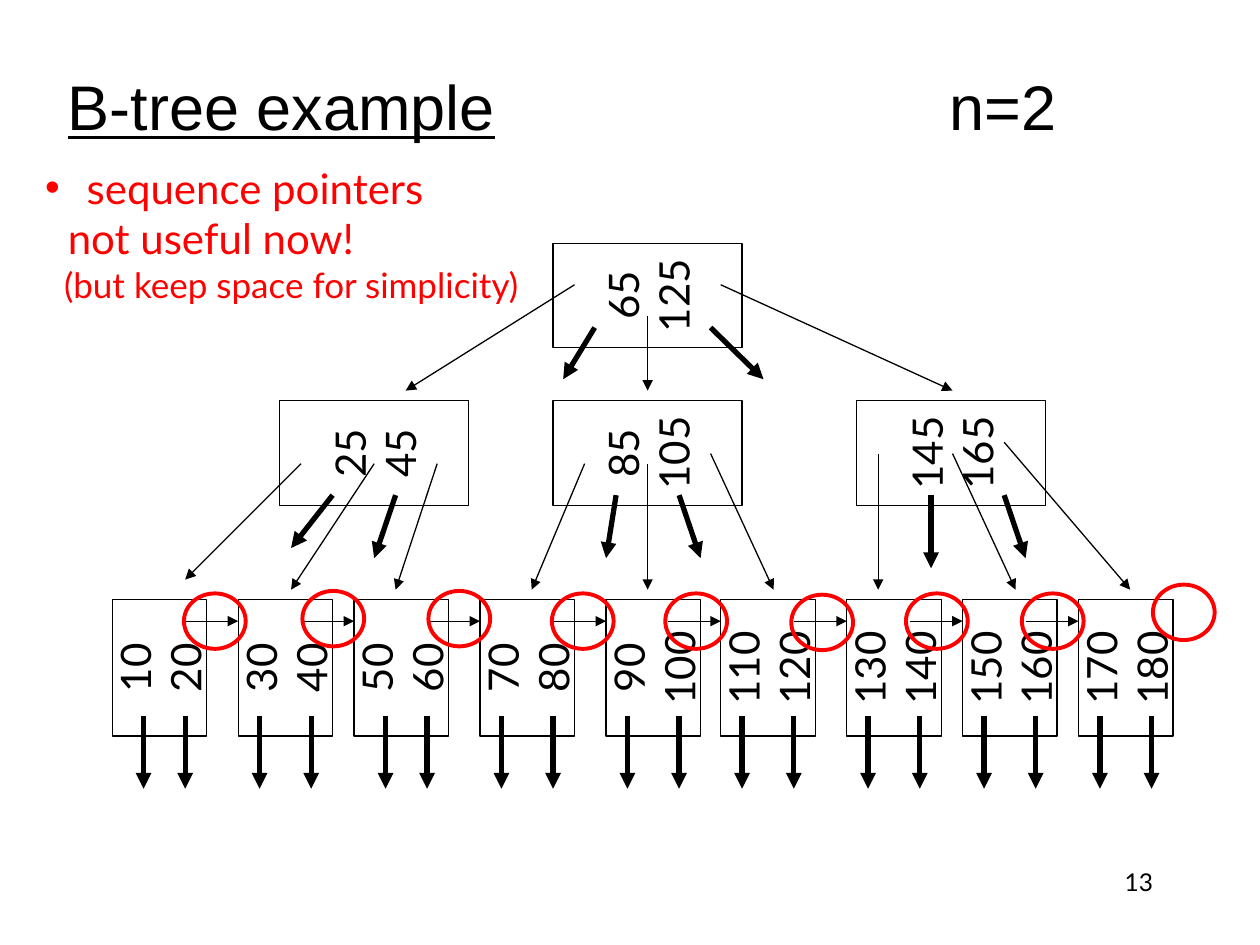
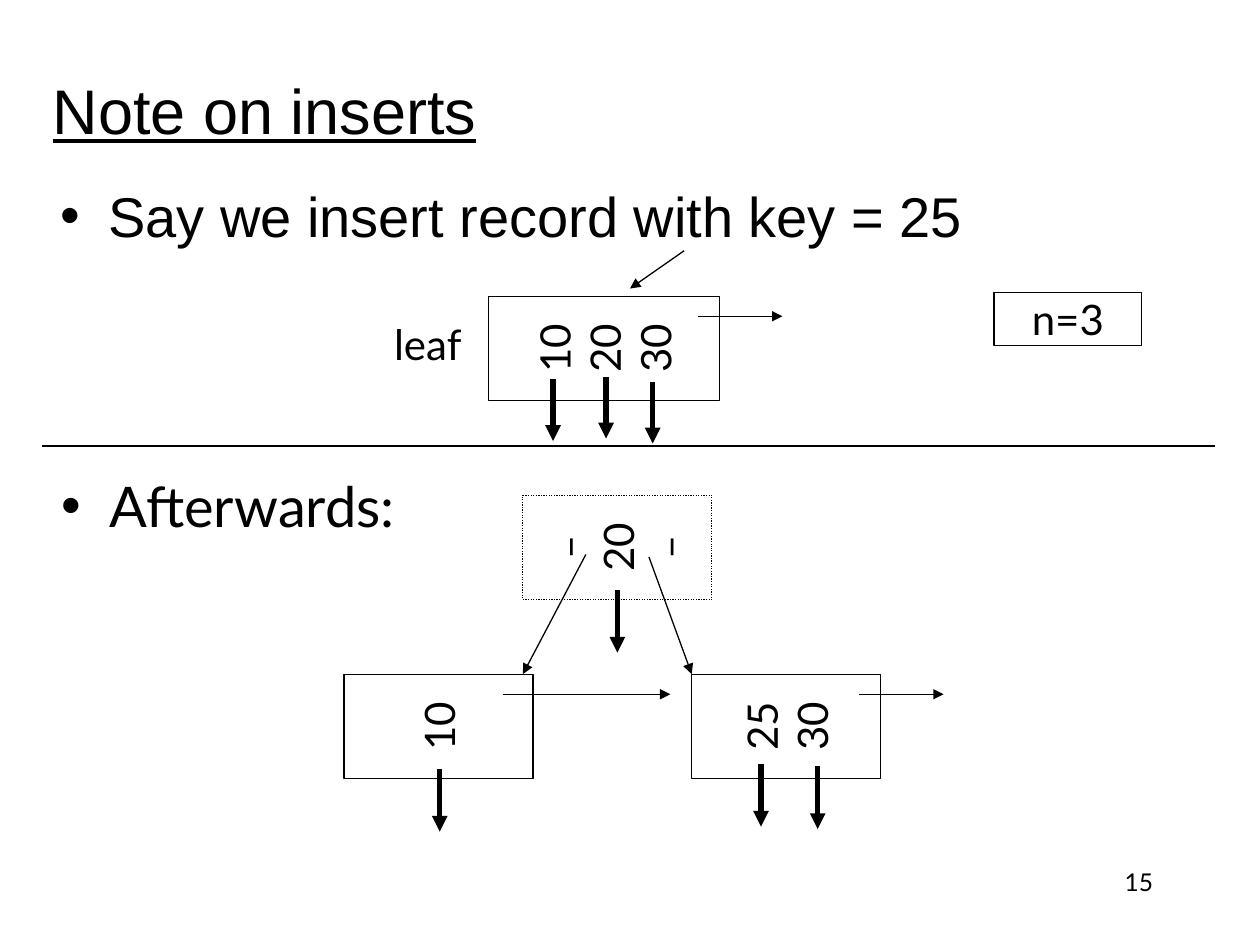
from pptx import Presentation
from pptx.dml.color import RGBColor
from pptx.enum.dml import MSO_LINE
from pptx.enum.shapes import MSO_CONNECTOR, MSO_SHAPE
from pptx.enum.text import MSO_ANCHOR as Anchor, PP_ALIGN as Align
from pptx.oxml.ns import qn
from pptx.util import Inches, Pt
from lxml.etree import SubElement

BLACK = RGBColor(0x00, 0x00, 0x00)
WHITE = RGBColor(0xFF, 0xFF, 0xFF)
RED = RGBColor(0xFF, 0x00, 0x00)
HEADING_FONT, BODY_FONT = "Arial", "Lato"
THIN, THICK, RING = 0.75, 3, 2.25
NODE_WIDTH, NODE_HEIGHT = 1.5, 0.83


def write(paragraph, text, *, size=24, font=BODY_FONT, color=BLACK, underline=False,
          align=Align.LEFT, bullet=False, margin=0, hanging=0, before=0, tab=None):
    """Add a formatted run; margin, hanging and tab are in inches, before in points."""
    run = paragraph.add_run()
    run.text = text
    run.font.size = Pt(size)
    run.font.name = font
    run.font.color.rgb = color
    run.font.underline = underline
    paragraph.alignment = align
    paragraph.space_before = Pt(before)
    properties = paragraph._p.get_or_add_pPr()
    if margin:
        properties.set("marL", str(Inches(margin)))
        properties.set("indent", str(Inches(-hanging)))
    if bullet:
        SubElement(properties, qn("a:buFont"), typeface="Arial")
        SubElement(properties, qn("a:buChar"), char="•")
    if tab:
        tabs = SubElement(properties, qn("a:tabLst"))
        SubElement(tabs, qn("a:tab"), pos=str(Inches(tab)), algn="l")


class SlideBuilder:
    def __init__(self, presentation):
        self.presentation = presentation
        self.slide = None

    def start(self, number):
        layout = self.presentation.slide_layouts[6]
        self.slide = self.presentation.slides.add_slide(layout)
        self.text(7.17, 6.83, 2.08, 0.5, str(number), size=14, align=Align.RIGHT)

    def text_box(self, left, top, width, height, anchor=Anchor.TOP):
        box = self.slide.shapes.add_textbox(
            Inches(left), Inches(top), Inches(width), Inches(height))
        box.text_frame.word_wrap = True
        box.text_frame.vertical_anchor = anchor
        return box.text_frame

    def text(self, left, top, width, height, text, anchor=Anchor.TOP, **style):
        frame = self.text_box(left, top, width, height, anchor)
        write(frame.paragraphs[0], text, **style)

    def title(self, left, top, text, aside=None):
        frame = self.text_box(left, top, 8.5, 1.25, Anchor.MIDDLE)
        paragraph = frame.paragraphs[0]
        write(paragraph, text, size=36, font=HEADING_FONT, underline=True)
        if aside:
            write(paragraph, "\t" + aside, size=36, font=HEADING_FONT, tab=7)

    def point(self, left, top, width, text, font):
        self.text(left, top, width, 0.67, text, size=32, font=font, bullet=True,
                  margin=0.38, hanging=0.38, before=6.4)

    def shape(self, kind, left, top, width, height, color, weight):
        shape = self.slide.shapes.add_shape(
            kind, Inches(left), Inches(top), Inches(width), Inches(height))
        shape.shadow.inherit = False
        shape.line.color.rgb = color
        shape.line.width = Pt(weight)
        return shape

    def box(self, left, top, width, height, lines):
        box = self.shape(MSO_SHAPE.RECTANGLE, left, top, width, height, BLACK, THIN)
        box.fill.solid()
        box.fill.fore_color.rgb = WHITE
        frame = box.text_frame
        frame.word_wrap = False
        frame.vertical_anchor = Anchor.MIDDLE
        for index, line in enumerate(lines):
            paragraph = frame.add_paragraph() if index else frame.paragraphs[0]
            write(paragraph, line, align=Align.CENTER)
        return box

    def node(self, left, top, keys, width=NODE_WIDTH, height=NODE_HEIGHT, dotted=False):
        """Draw a tree node at its visible place; the box is turned so its keys read upwards."""
        shift = (width - height) / 2
        node = self.box(left + shift, top - shift, height, width, [str(key) for key in keys])
        node.rotation = 270
        if dotted:
            node.line.dash_style = MSO_LINE.ROUND_DOT

    def ring(self, left, top):
        ring = self.shape(MSO_SHAPE.OVAL, left, top, 0.49, 0.44, RED, RING)
        ring.fill.background()

    def line(self, x1, y1, x2, y2, weight=THIN, arrow=True):
        connector = self.slide.shapes.add_connector(
            MSO_CONNECTOR.STRAIGHT, Inches(x1), Inches(y1), Inches(x2), Inches(y2))
        connector.line.color.rgb = BLACK
        connector.line.width = Pt(weight)
        properties = connector._element.spPr
        if arrow:
            SubElement(properties.find(qn("a:ln")), qn("a:tailEnd"), type="triangle")
        SubElement(properties, qn("a:effectLst"))

    def lines(self, ends, weight=THIN):
        for points in ends:
            self.line(*points, weight=weight)


def build_tree_example(builder):
    builder.start(13)
    builder.title(0.44, 0.21, "B-tree example", aside="n=2")

    for left, top, keys in [(4.39, 1.93, (65, 125)), (2.22, 3.18, (25, 45)),
                            (4.39, 3.18, (85, 105)), (6.8, 3.18, (145, 165))]:
        builder.node(left, top, keys)

    leaf_lefts = [0.89, 1.89, 2.81, 3.81, 4.81, 5.72, 6.72, 7.64, 8.56]
    for index, left in enumerate(leaf_lefts):
        first_key = 10 + 20 * index
        builder.node(left, 4.76, (first_key, first_key + 10), width=0.75, height=1.08)

    child_pointers = [
        (4.56, 2.26, 3.22, 3.1), (5.14, 2.51, 5.14, 3.1), (5.72, 2.26, 7.56, 3.1),
        (2.39, 3.68, 1.47, 4.6), (2.97, 3.68, 2.31, 4.68), (3.47, 3.68, 3.14, 4.68),
        (4.64, 3.68, 4.22, 4.68), (5.14, 3.68, 5.14, 4.68), (5.64, 3.6, 6.14, 4.68),
        (6.97, 3.6, 6.97, 4.68), (7.56, 3.6, 8.06, 4.68), (7.97, 3.51, 8.97, 4.68),
    ]
    builder.lines(child_pointers)

    inner_record_pointers = [
        (4.72, 2.6, 4.47, 3.01), (5.64, 2.6, 6.06, 3.01),
        (2.64, 3.93, 2.31, 4.35), (3.14, 3.93, 2.97, 4.43),
        (4.89, 3.93, 4.81, 4.43), (5.39, 3.93, 5.56, 4.43),
        (7.39, 3.93, 7.39, 4.51), (7.97, 3.93, 8.14, 4.43),
    ]
    builder.lines(inner_record_pointers, THICK)

    for index, left in enumerate(leaf_lefts):
        first_offset = 0.25 if index in (0, 2) else 0.17
        for x in (left + first_offset, left + 0.58):
            builder.line(x, 5.68, x, 6.26, weight=THICK)
    for next_left in leaf_lefts[1:]:
        builder.line(next_left - 0.42, 4.93, next_left, 4.93)

    for left, top in [(1.46, 4.71), (2.4, 4.69), (3.4, 4.69), (4.38, 4.71), (5.28, 4.71),
                      (6.28, 4.72), (7.19, 4.71), (8.11, 4.71), (9.15, 4.64)]:
        builder.ring(left, top)

    remark = builder.text_box(0.26, 1.24, 4.08, 1.23, Anchor.MIDDLE)
    write(remark.paragraphs[0], "sequence pointers", color=RED, bullet=True,
          margin=0.33, hanging=0.33)
    write(remark.add_paragraph(), "not useful now!", color=RED, margin=0.18)
    write(remark.add_paragraph(), "(but keep space for simplicity)", size=20, color=RED,
          margin=0.15)


def build_insert_note(builder):
    builder.start(15)
    builder.title(0.32, 0.24, "Note on inserts")
    builder.point(0.38, 1.39, 8.5, "Say we insert record with key = 25", HEADING_FONT)

    builder.node(3.88, 2.35, (10, 20, 30), width=1.83)
    builder.box(7.89, 2.32, 1.17, 0.42, ["n=3"])
    builder.text(2.95, 2.48, 0.89, 0.5, "leaf", anchor=Anchor.MIDDLE, align=Align.CENTER)
    builder.line(0.33, 3.54, 9.64, 3.54, arrow=False)

    builder.point(0.39, 3.69, 3.11, "Afterwards:", BODY_FONT)
    builder.node(4.15, 3.93, ("–", 20, "–"), dotted=True)
    builder.node(2.73, 5.35, (10,))
    builder.node(5.49, 5.35, (25, 30))

    insert_and_sequence_arrows = [(5.43, 1.99, 5, 2.29), (5.54, 2.51, 6.21, 2.51),
                                  (3.99, 5.51, 5.32, 5.51), (6.82, 5.51, 7.49, 5.51)]
    child_pointers = [(4.65, 4.4, 4.15, 5.35), (5.15, 4.42, 5.49, 5.35)]
    builder.lines(insert_and_sequence_arrows + child_pointers)

    for x, top, length in [(4.39, 3.01, 0.49), (4.81, 2.99, 0.49), (5.18, 3.03, 0.49),
                           (4.9, 4.68, 0.5), (3.49, 6.1, 0.5), (6.04, 6.06, 0.5),
                           (6.49, 6.08, 0.5)]:
        builder.line(x, top, x, top + length, weight=THICK)


def main():
    presentation = Presentation()
    presentation.slide_width = Inches(10)
    presentation.slide_height = Inches(7.5)
    builder = SlideBuilder(presentation)
    build_tree_example(builder)
    build_insert_note(builder)
    presentation.save("out.pptx")


if __name__ == "__main__":
    main()
